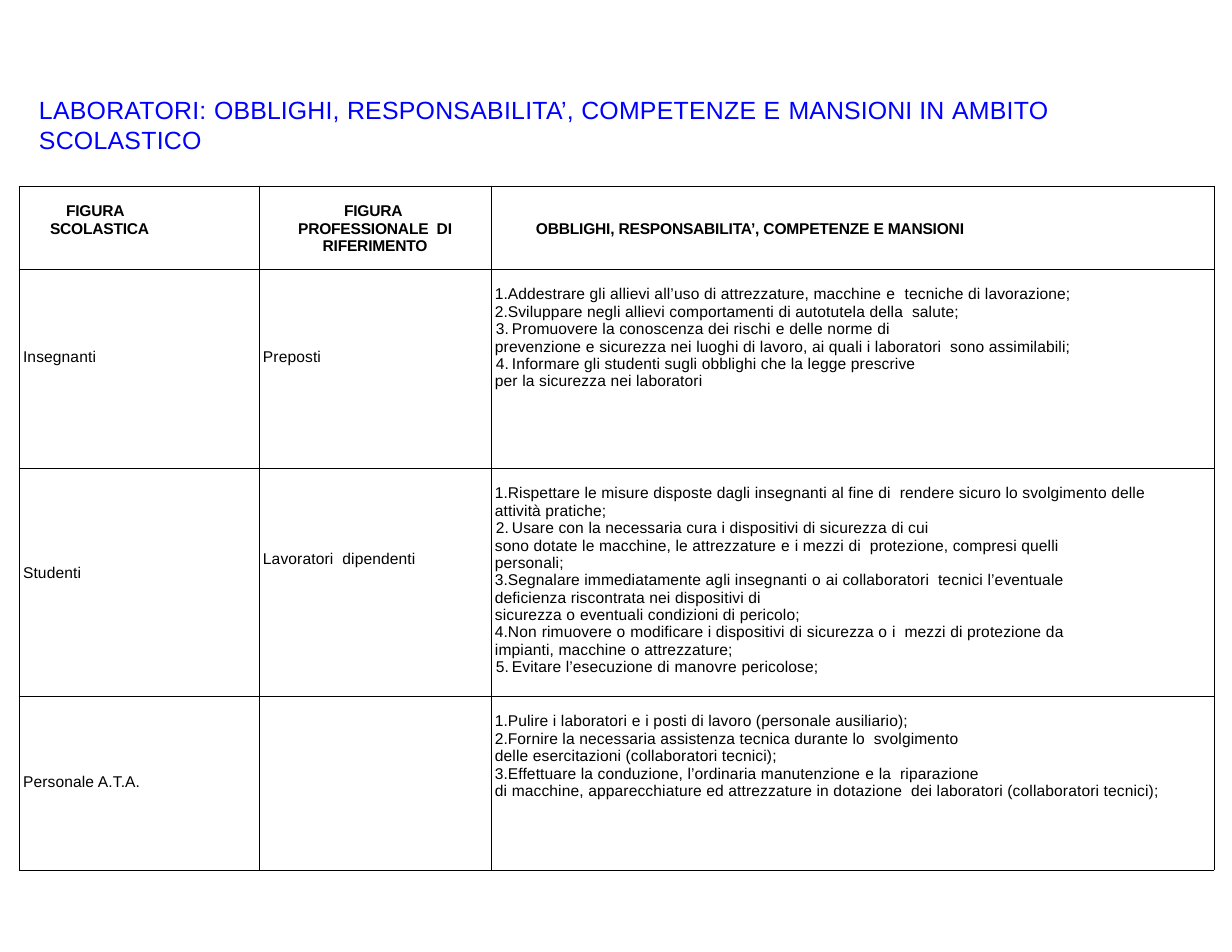
from lxml.etree import SubElement
from pptx import Presentation
from pptx.dml.color import RGBColor
from pptx.enum.text import MSO_ANCHOR, PP_ALIGN
from pptx.oxml import parse_xml
from pptx.oxml.ns import nsdecls, qn
from pptx.util import Emu, Pt

COLS = [240, 232, 723]
ROWS = [83, 199, 228, 174]
FLAT = (4, 0)
HANG = (21, -16)

TITLE = ("LABORATORI: |OBBLIGHI, |RESPONSABILITA’, COMPETENZE E "
         "|MANSIONI IN |AMBITO SCOLASTICO")

HEADS = [
    ("FIGURA  SCOLASTICA", (31, 16), (0, 17, 100), PP_ALIGN.LEFT),
    ("FIGURA  PROFESSIONALE  DI RIFERIMENTO", (0, 0), (30, 17, 30), PP_ALIGN.CENTER),
    ("OBBLIGHI, RESPONSABILITA’, COMPETENZE E MANSIONI", (45, 0), (0, 35, 0), PP_ALIGN.LEFT),
]

ROLES = [
    [("Insegnanti", 80), ("Preposti", 80)],
    [("Studenti", 97), ("Lavoratori  dipendenti", 83)],
    [("Personale A.T.A.", 78)],
]

DUTIES = [
    [
        ("Addestrare gli allievi all’uso di attrezzature, macchine |e  |tecniche di lavorazione;", FLAT, 1),
        ("Sviluppare negli allievi comportamenti di autotutela della  salute;", FLAT, 1),
        ("Promuovere la conoscenza dei rischi |e |delle |norme |di", HANG, 1),
        ("prevenzione |e |sicurezza nei luoghi di lavoro, ai quali i laboratori  sono assimilabili;", FLAT, 0),
        ("Informare gli studenti sugli obblighi che la legge prescrive", HANG, 4),
        ("per la sicurezza nei laboratori", FLAT, 0),
    ],
    [
        ("Rispettare le misure disposte dagli insegnanti al fine di  rendere sicuro "
         "lo svolgimento delle attività pratiche;", FLAT, 1),
        ("Usare con la necessaria cura i dispositivi di sicurezza di cui", HANG, 1),
        ("sono dotate le macchine, le attrezzature |e |i mezzi di  protezione, "
         "compresi quelli personali;", FLAT, 0, 70),
        ("Segnalare immediatamente agli insegnanti |o |ai collaboratori  tecnici "
         "l’eventuale deficienza riscontrata nei dispositivi di", FLAT, 3),
        ("sicurezza |o |eventuali condizioni di pericolo;", FLAT, 0),
        ("|Non |rimuovere |o |modificare i dispositivi |di |sicurezza |o "
         "|i  mezzi di protezione |da |impianti, macchine |o |attrezzature;", FLAT, 4),
        ("Evitare l’esecuzione di |manovre |pericolose;", HANG, 4),
    ],
    [
        ("Pulire i laboratori |e |i posti di lavoro (personale ausiliario);", FLAT, 1),
        ("Fornire la necessaria assistenza tecnica durante lo  svolgimento", FLAT, 1),
        ("delle esercitazioni (collaboratori tecnici);", FLAT, 0),
        ("Effettuare la conduzione, l’ordinaria manutenzione |e |la  riparazione", FLAT, 3),
        ("di macchine, apparecchiature ed attrezzature in dotazione  dei laboratori "
         "(collaboratori tecnici);", FLAT, 0),
    ],
]


def px(n):
    return Emu(round(n * 914400 / 112))


def paint(font, hue):
    font.color.rgb = RGBColor.from_string(hue)


def add_runs(para, text, size=10, hue="000000", bold=False, gaps=(10, 20)):
    for i, part in enumerate(text.split("|")):
        if part:
            run = para.add_run()
            run.text = part
            run.font.name = "Arial"
            run.font.size = Pt(size)
            run.font.bold = bold
            paint(run.font, hue)
            run.font._element.set("spc", str(gaps[i % 2]))


def indent(para, left, first, right=0):
    props = para._p.get_or_add_pPr()
    props.set("marL", str(px(left)))
    props.set("indent", str(px(first)))
    if right:
        props.set("marR", str(px(right)))
    return props


def number(props, start):
    mark = SubElement(props, qn("a:buAutoNum"), type="arabicPeriod")
    if start > 1:
        mark.set("startAt", str(start))


def pad(cell, left, top, right):
    cell.margin_left, cell.margin_top = px(left), px(top)
    cell.margin_right, cell.margin_bottom = px(right), 0


def frame(cell):
    props = cell._tc.get_or_add_tcPr()
    for i, side in enumerate("LRTB"):
        props.insert(i, parse_xml(
            f'<a:ln{side} {nsdecls("a")} w="6096"><a:solidFill>'
            f'<a:srgbClr val="000000"/></a:solidFill></a:ln{side}>'))
    cell.fill.background()


def add_title(slide):
    title = slide.shapes.title
    title.left, title.top, title.width, title.height = map(px, (37, 95, 1167, 60))
    box = title.text_frame
    box.margin_left = box.margin_top = box.margin_right = box.margin_bottom = 0
    box.vertical_anchor = MSO_ANCHOR.TOP
    box.word_wrap = True
    para = box.paragraphs[0]
    para.alignment = PP_ALIGN.LEFT
    indent(para, 2, 0)
    add_runs(para, TITLE, 16, "0000FF", gaps=(20, 10))


def add_grid(slide):
    grid = slide.shapes.add_table(
        len(ROWS), len(COLS), px(19), px(186), px(sum(COLS)), px(sum(ROWS))).table
    grid.first_row = grid.horz_banding = False
    for col, wide in zip(grid.columns, COLS):
        col.width = px(wide)
    for row, high in zip(grid.rows, ROWS):
        row.height = px(high)
    for cell in grid.iter_cells():
        pad(cell, 0, 0, 0)
        frame(cell)
    return grid


def fill_head(cell, text, dents, pads, align):
    pad(cell, *pads)
    para = cell.text_frame.paragraphs[0]
    para.alignment = align
    indent(para, *dents)
    add_runs(para, text, bold=True, gaps=(-10, 0))


def fill_role(cell, text, top):
    pad(cell, 0, top, 0)
    para = cell.text_frame.paragraphs[0]
    indent(para, *FLAT)
    add_runs(para, text)


def fill_list(cell, items):
    pad(cell, 0, 17, 35)
    box = cell.text_frame
    for i, (text, dents, start, *right) in enumerate(items):
        para = box.add_paragraph() if i else box.paragraphs[0]
        props = indent(para, *dents, *right)
        if start:
            number(props, start)
        add_runs(para, text)


def main():
    deck = Presentation()
    deck.slide_width, deck.slide_height = px(1232), px(952)
    slide = deck.slides.add_slide(deck.slide_layouts[5])
    add_title(slide)
    grid = add_grid(slide)
    for c, head in enumerate(HEADS):
        fill_head(grid.cell(0, c), *head)
    for r, (roles, items) in enumerate(zip(ROLES, DUTIES), 1):
        for c, role in enumerate(roles):
            fill_role(grid.cell(r, c), *role)
        fill_list(grid.cell(r, 2), items)
    deck.save("out.pptx")


if __name__ == "__main__":
    main()
